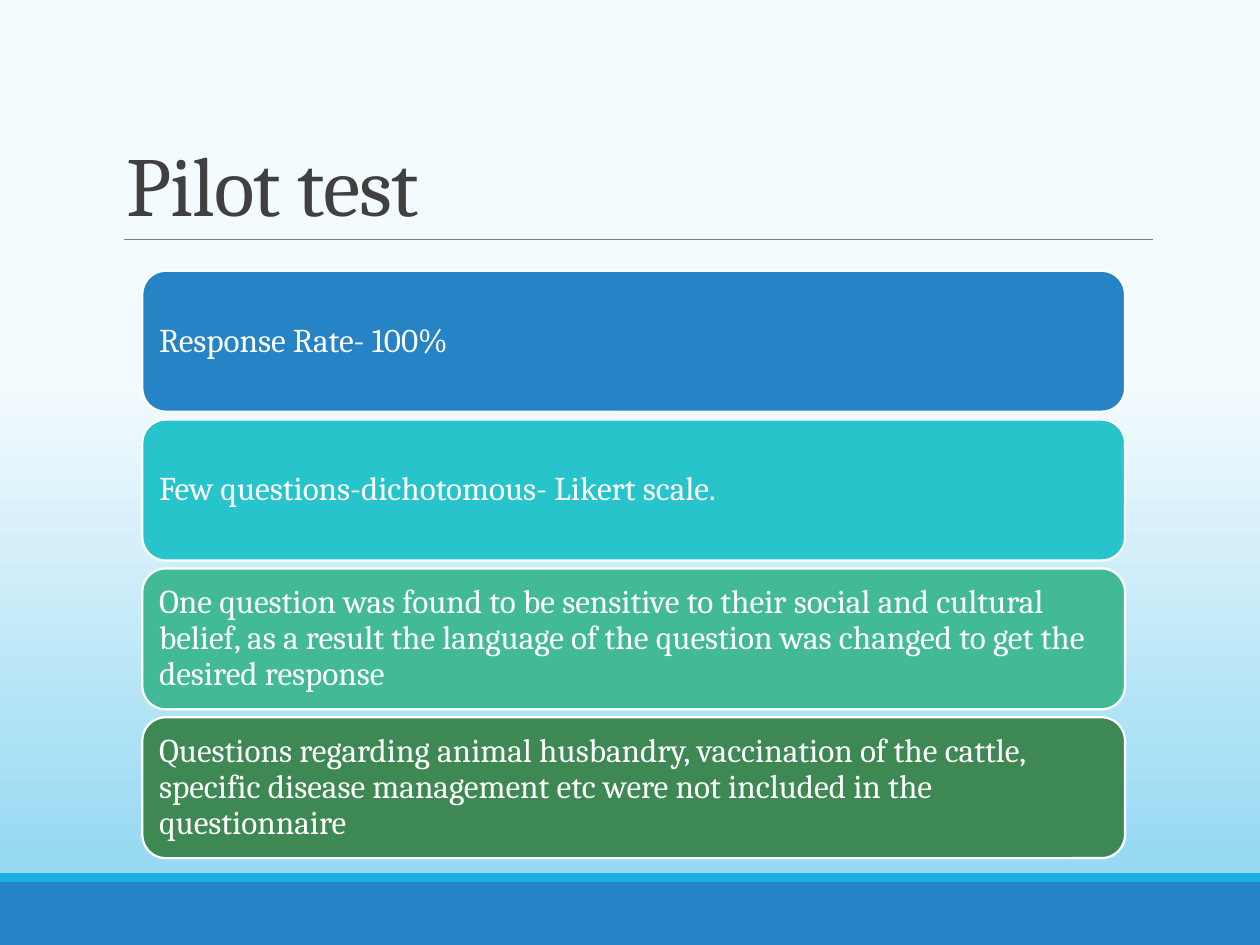
import pptx
import pptx.dml.color
import pptx.enum.shapes
import pptx.enum.text
import pptx.util
from lxml import etree

Cm = pptx.util.Cm
Pt = pptx.util.Pt
RGBColor = pptx.dml.color.RGBColor
SHAPES = pptx.enum.shapes.MSO_SHAPE
ANCHOR = pptx.enum.text.MSO_ANCHOR

SKY_TOP = RGBColor(0xF4, 0xFB, 0xFE)
SKY_BOTTOM = RGBColor(0x99, 0xDA, 0xF3)
BLUE = RGBColor(0x26, 0x83, 0xC6)
LIGHT_BLUE = RGBColor(0x1C, 0xAD, 0xE4)
TURQUOISE = RGBColor(0x28, 0xC4, 0xCC)
MINT = RGBColor(0x42, 0xBA, 0x97)
GREEN = RGBColor(0x3E, 0x88, 0x53)
GREY = RGBColor(0x80, 0x80, 0x80)
CHARCOAL = RGBColor(0x40, 0x40, 0x40)
WHITE = RGBColor(0xFF, 0xFF, 0xFF)

FONT = "Cambria"
SLIDE_WIDTH = Cm(25.4)
SLIDE_HEIGHT = Cm(19.05)
CARD_LEFT, CARD_TOP = Cm(2.87), Cm(5.46)
CARD_WIDTH, CARD_HEIGHT = Cm(19.81), Cm(2.84)
CARD_PITCH = Cm(3)

FINDINGS = [
    ("Response Rate- 100%", BLUE),
    ("Few questions-dichotomous- Likert scale.", TURQUOISE),
    ("One question was found to be sensitive to their social and cultural "
     "belief, as a result the language of the question was changed to get "
     "the desired response", MINT),
    ("Questions regarding animal husbandry, vaccination of the cattle, "
     "specific disease management etc were not included in the "
     "questionnaire", GREEN),
]


def apply_format(target, values):
    for name, value in values.items():
        setattr(target, name, value)


def paint_background(slide):
    sky = slide.background.fill
    sky.gradient()
    sky.gradient_angle = 270
    stops = [(0.4, SKY_TOP), (0.9, SKY_BOTTOM)]
    for stop, (position, color) in zip(sky.gradient_stops, stops):
        stop.position = position
        stop.color.rgb = color


def write_text(shape, text, size, color, spacing, frame_format):
    frame = shape.text_frame
    apply_format(frame, {"word_wrap": True, **frame_format})
    paragraph = frame.paragraphs[0]
    apply_format(paragraph, {
        "alignment": pptx.enum.text.PP_ALIGN.LEFT,
        "line_spacing": spacing,
    })
    run = paragraph.add_run()
    run.text = text
    apply_format(run.font, {"name": FONT, "size": Pt(size)})
    run.font.color.rgb = color
    return run


def add_block(slide, preset, left, top, width, height, color):
    block = slide.shapes.add_shape(preset, left, top, width, height)
    block.shadow.inherit = False
    block.fill.solid()
    block.fill.fore_color.rgb = color
    block.line.fill.background()
    return block


def add_rule(slide, left, right, y):
    rule = slide.shapes.add_connector(
        pptx.enum.shapes.MSO_CONNECTOR.STRAIGHT, left, y, right, y)
    rule.line.color.rgb = GREY
    rule.line.width = Pt(0.5)
    properties = rule.element.spPr
    etree.SubElement(properties, pptx.oxml.ns.qn("a:effectLst"))


def format_title(slide, text):
    title = slide.shapes.title
    apply_format(title, {
        "left": Cm(2.29), "top": Cm(0.79),
        "width": Cm(20.96), "height": Cm(4.04),
    })
    run = write_text(title, text, 48, CHARCOAL, 0.85, {
        "vertical_anchor": ANCHOR.BOTTOM,
        "auto_size": pptx.enum.text.MSO_AUTO_SIZE.NONE,
    })
    run.font.element.set("spc", "-50") if hasattr(run.font, "element") \
        else run.text and run._r.get_or_add_rPr().set("spc", "-50")


def add_card(slide, row, text, color):
    card = add_block(slide, SHAPES.ROUNDED_RECTANGLE, CARD_LEFT,
                     CARD_TOP + row * CARD_PITCH, CARD_WIDTH, CARD_HEIGHT,
                     color)
    card.line.color.rgb = WHITE
    card.line.width = Pt(1.25)
    margins = {f"margin_{side}": Cm(0.2)
               for side in ("left", "top", "right", "bottom")}
    write_text(card, text, 19, WHITE, 0.9,
               {"vertical_anchor": ANCHOR.MIDDLE, **margins})


def main():
    deck = pptx.Presentation()
    apply_format(deck, {"slide_width": SLIDE_WIDTH,
                        "slide_height": SLIDE_HEIGHT})
    slide = deck.slides.add_slide(deck.slide_layouts[5])
    paint_background(slide)
    add_block(slide, SHAPES.RECTANGLE, 0, Cm(17.78), SLIDE_WIDTH, Cm(1.27),
              BLUE)
    add_block(slide, SHAPES.RECTANGLE, 0, Cm(17.6), SLIDE_WIDTH, Cm(0.18),
              LIGHT_BLUE)
    add_rule(slide, Cm(2.49), Cm(23.24), Cm(4.83))
    format_title(slide, "Pilot test")
    for row, (text, color) in enumerate(FINDINGS):
        add_card(slide, row, text, color)
    deck.save("out.pptx")


if __name__ == "__main__":
    main()
